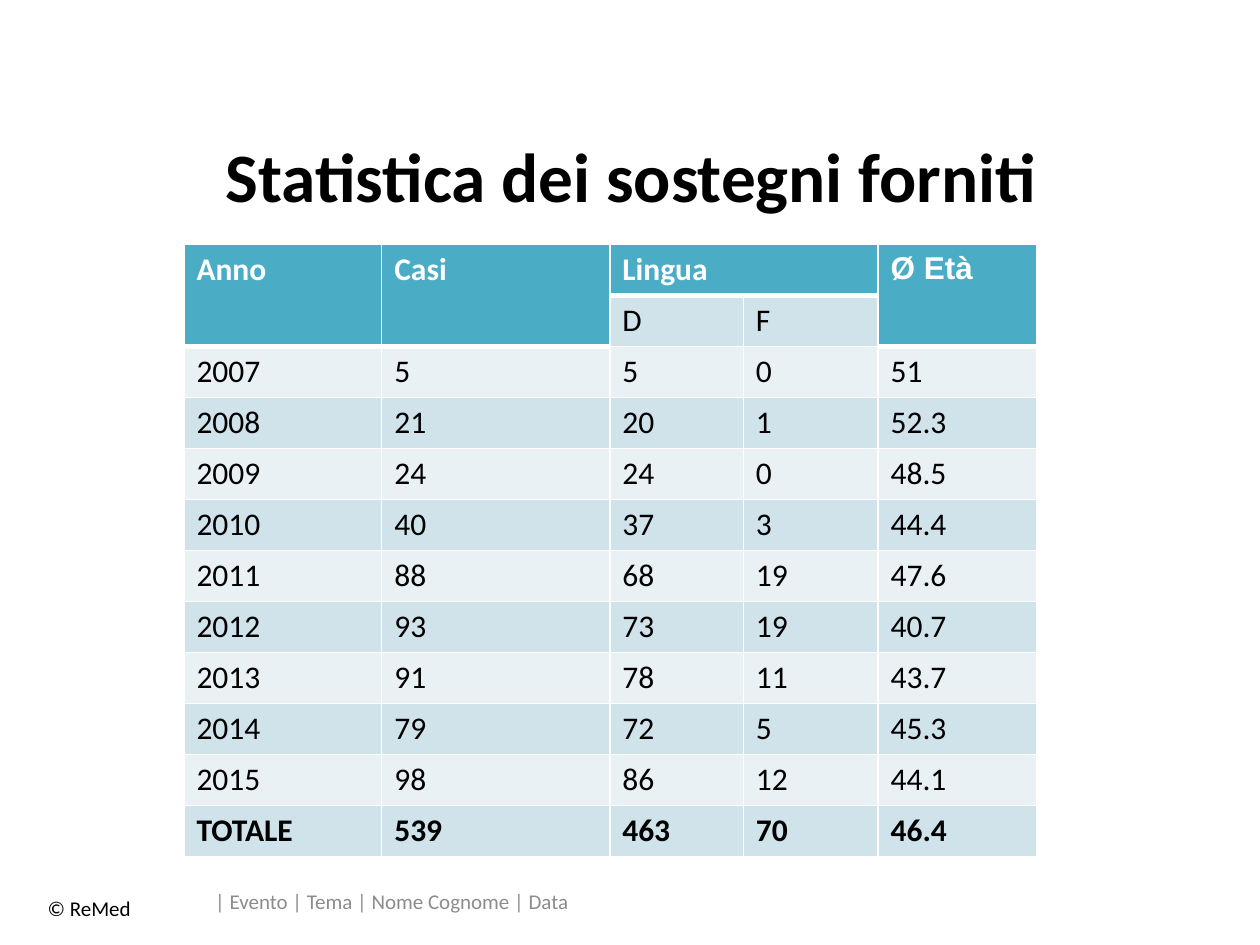
from lxml import etree
from pptx import Presentation
from pptx.dml.color import RGBColor
from pptx.enum.text import MSO_ANCHOR, PP_ALIGN
from pptx.oxml.ns import qn
from pptx.util import Inches, Pt

TOP, MIDDLE = MSO_ANCHOR.TOP, MSO_ANCHOR.MIDDLE
LEFT, CENTER = PP_ALIGN.LEFT, PP_ALIGN.CENTER

COLORS = {
    "black": "000000",
    "white": "FFFFFF",
    "grey": "8C8C8C",
    "head": "4BACC6",
    "light": "E9F1F5",
    "dark": "D0E3EA",
}

WIDTHS = [1.57, 1.81, 1.06, 1.07, 1.26]
HEIGHT = 4.86
ROWS = [
    ["Anno", "Casi", "Lingua", "", "Ø Età"],
    ["", "", "D", "F", ""],
    ["2007", "5", "5", "0", "51"],
    ["2008", "21", "20", "1", "52.3"],
    ["2009", "24", "24", "0", "48.5"],
    ["2010", "40", "37", "3", "44.4"],
    ["2011", "88", "68", "19", "47.6"],
    ["2012", "93", "73", "19", "40.7"],
    ["2013", "91", "78", "11", "43.7"],
    ["2014", "79", "72", "5", "45.3"],
    ["2015", "98", "86", "12", "44.1"],
    ["TOTALE", "539", "463", "70", "46.4"],
]
# First and last cell of each merged heading
SPANS = [((0, 0), (1, 0)), ((0, 1), (1, 1)), ((0, 2), (0, 3)), ((0, 4), (1, 4))]


def color(name):
    return RGBColor.from_string(COLORS[name])


def style(font, ink, **values):
    font.color.rgb = color(ink)
    for key, value in {"name": "Calibri", **values}.items():
        setattr(font, key, value)


def add_text(slide, text, box, ink, size, bold=False, align=LEFT, anchor=TOP):
    frame = slide.shapes.add_textbox(*map(Inches, box)).text_frame
    frame.word_wrap = True
    frame.vertical_anchor = anchor
    par = frame.paragraphs[0]
    par.alignment = align
    run = par.add_run()
    run.text = text
    style(run.font, ink, size=Pt(size), bold=bold)


def is_head(row, col):
    return row == 0 or (row == 1 and col in (0, 1, 4))


def add_edges(cell, row, col):
    """White borders, thicker between heading and body."""
    head = is_head(row, col)
    above = is_head(max(row - 1, 0), col)
    below = is_head(row + 1, col)
    edges = {
        "L": 1,
        "R": 1,
        "T": 3 if above and not head else 1,
        "B": 3 if head and not below else 1,
    }
    props = cell._tc.get_or_add_tcPr()
    for side, width in edges.items():
        line = etree.SubElement(props, qn(f"a:ln{side}"), w=str(Pt(width)))
        fill = etree.SubElement(line, qn("a:solidFill"))
        etree.SubElement(fill, qn("a:srgbClr"), val=COLORS["white"])


def fill_cell(cell, text, row, col):
    head = is_head(row, col)
    add_edges(cell, row, col)
    cell.fill.solid()
    band = "dark" if row % 2 else "light"
    cell.fill.fore_color.rgb = color("head" if head else band)
    if text:
        run = cell.text_frame.paragraphs[0].add_run()
        run.text = text
        style(run.font, "white" if head else "black", size=Pt(18),
              bold=head or row == len(ROWS) - 1,
              name="Arial" if "Ø" in text else "Calibri")


def add_stats(slide):
    box = map(Inches, (1.46, 1.94, sum(WIDTHS), HEIGHT))
    table = slide.shapes.add_table(len(ROWS), len(WIDTHS), *box).table
    for col, width in zip(table.columns, WIDTHS):
        col.width = Inches(width)
    for line in table.rows:
        line.height = Inches(HEIGHT / len(ROWS))
    for row, texts in enumerate(ROWS):
        for col, text in enumerate(texts):
            fill_cell(table.cell(row, col), text, row, col)
    for first, last in SPANS:
        table.cell(*first).merge(table.cell(*last))


def main():
    deck = Presentation()
    deck.slide_width, deck.slide_height = Inches(10), Inches(7.5)
    slide = deck.slides.add_slide(deck.slide_layouts[6])

    # Title
    add_text(slide, "Statistica dei sostegni forniti", (0.51, 1.07, 9, 0.63),
             "black", 39.6, bold=True, align=CENTER, anchor=MIDDLE)

    # Cases by year
    add_stats(slide)

    # Footer
    add_text(slide, "| Evento | Tema | Nome Cognome | Data",
             (1.61, 6.95, 4.97, 0.4), "grey", 12, anchor=MIDDLE)
    add_text(slide, "© ReMed", (0.28, 7.06, 1.34, 0.3), "black", 12)

    deck.save("out.pptx")


if __name__ == "__main__":
    main()
